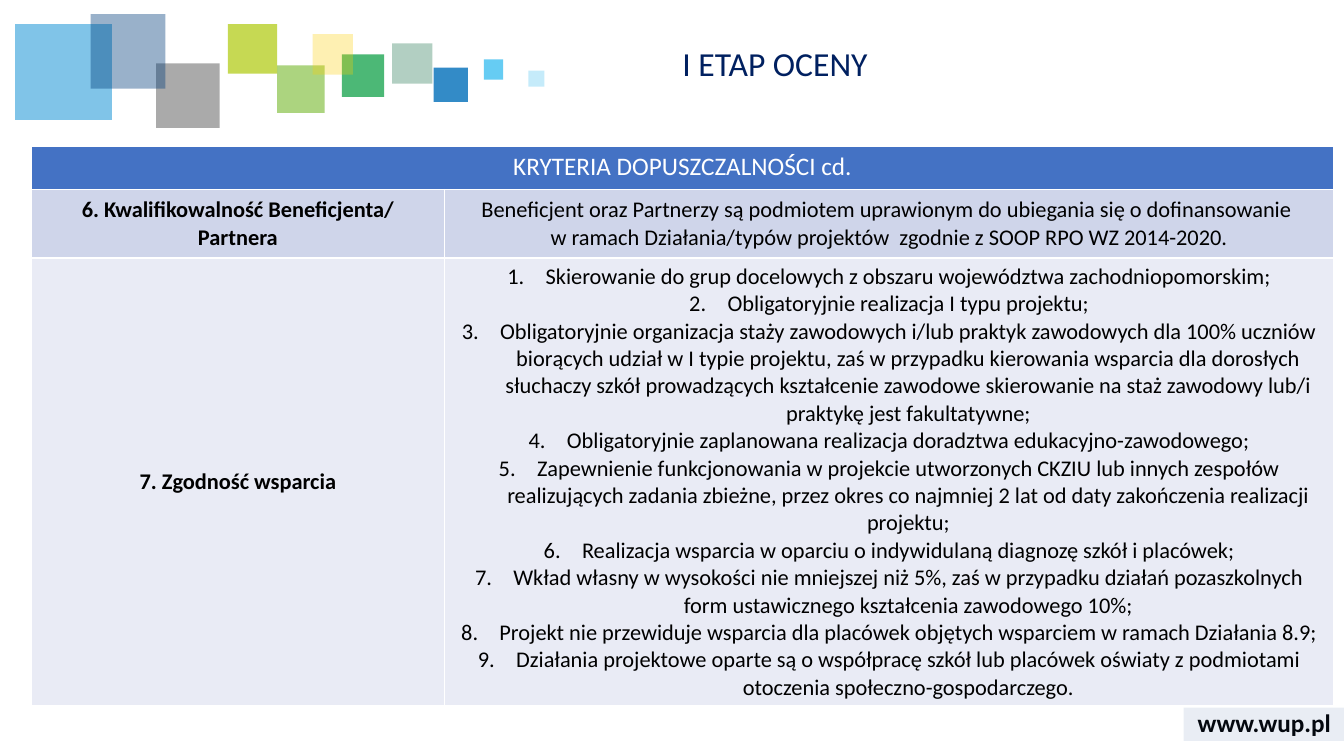
from dataclasses import dataclass
from typing import Any

from lxml.etree import SubElement
from pptx import Presentation
from pptx.dml.color import RGBColor
from pptx.enum.shapes import MSO_SHAPE as Shape
from pptx.enum.text import MSO_ANCHOR as Anchor, PP_ALIGN as Align
from pptx.oxml.ns import qn
from pptx.util import Inches, Pt


@dataclass(frozen=True)
class Theme:
    font: str = "Calibri"
    navy: str = "002060"
    black: str = "000000"
    white: str = "FFFFFF"
    header: str = "4472C4"
    band_dark: str = "CFD5EA"
    band_light: str = "E9EBF5"
    footer: str = "2F5597"
    title_size: int = 24
    heading_size: int = 18
    body_size: int = 16


@dataclass(frozen=True)
class Tile:
    left: float
    top: float
    width: float
    height: float
    color: str
    opacity: int


@dataclass(frozen=True)
class CellText:
    row: int
    column: int
    lines: tuple[str, ...]
    fill: str
    bold: bool = False
    numbered: bool = False
    size: int = 16
    color: str = "000000"
    anchor: Any = Anchor.MIDDLE


THEME = Theme()

TILES = (
    Tile(3.89, 0.43, 0.4, 0.4, "006138", 30),
    Tile(4.3, 0.67, 0.34, 0.34, "006EB9", 80),
    Tile(3.39, 0.54, 0.42, 0.42, "009A3C", 70),
    Tile(0.15, 0.24, 0.96, 0.95, "028BD3", 50),
    Tile(2.75, 0.65, 0.47, 0.47, "75B82A", 60),
    Tile(1.55, 0.63, 0.63, 0.64, "575757", 50),
    Tile(0.9, 0.14, 0.74, 0.74, "003D7C", 40),
    Tile(4.8, 0.59, 0.19, 0.2, "40C0F1", 80),
    Tile(2.26, 0.24, 0.49, 0.49, "AFCA0B", 70),
    Tile(3.1, 0.34, 0.4, 0.4, "FED000", 30),
    Tile(5.24, 0.7, 0.16, 0.16, "40C0F1", 30),
    Tile(11.74, 7.02, 1.6, 0.33, THEME.footer, 10),
)

REQUIREMENTS = (
    "Skierowanie do grup docelowych z obszaru województwa zachodniopomorskim;",
    "Obligatoryjnie realizacja I typu projektu;",
    "Obligatoryjnie organizacja staży zawodowych i/lub praktyk zawodowych dla 100% uczniów "
    "biorących udział w I typie projektu, zaś w przypadku kierowania wsparcia dla dorosłych "
    "słuchaczy szkół prowadzących kształcenie zawodowe skierowanie na staż zawodowy lub/i "
    "praktykę jest fakultatywne;",
    "Obligatoryjnie zaplanowana realizacja doradztwa edukacyjno-zawodowego;",
    "Zapewnienie funkcjonowania w projekcie utworzonych CKZIU lub innych zespołów "
    "realizujących zadania zbieżne, przez okres co najmniej 2 lat od daty zakończenia "
    "realizacji projektu;",
    "Realizacja wsparcia w oparciu o indywidulaną diagnozę szkół i placówek;",
    "Wkład własny w wysokości nie mniejszej niż 5%, zaś w przypadku działań pozaszkolnych "
    "form ustawicznego kształcenia zawodowego 10%;",
    "Projekt nie przewiduje wsparcia dla placówek objętych wsparciem w ramach Działania 8.9;",
    "Działania projektowe oparte są o współpracę szkół lub placówek oświaty z podmiotami "
    "otoczenia społeczno-gospodarczego.",
)

CELLS = (
    CellText(0, 0, ("KRYTERIA DOPUSZCZALNOŚCI cd.",), THEME.header,
             size=THEME.heading_size, color=THEME.white, anchor=Anchor.TOP),
    CellText(1, 0, ("6. Kwalifikowalność Beneficjenta/ Partnera",), THEME.band_dark, bold=True),
    CellText(1, 1, ("Beneficjent oraz Partnerzy są podmiotem uprawionym do ubiegania się "
                    "o dofinansowanie \nw ramach Działania/typów projektów  zgodnie z SOOP "
                    "RPO WZ 2014-2020.",), THEME.band_dark),
    CellText(2, 0, ("7. Zgodność wsparcia",), THEME.band_light, bold=True),
    CellText(2, 1, REQUIREMENTS, THEME.band_light, numbered=True),
)


def write_line(para: Any, text: str, size: int, color: str, bold: bool = False) -> None:
    for index, part in enumerate(text.split("\n")):
        if index:
            para.add_line_break()
        span = para.add_run()
        span.text = part
        for name, value in {"name": THEME.font, "size": Pt(size), "bold": bold}.items():
            setattr(span.font, name, value)
        span.font.color.rgb = RGBColor.from_string(color)


def number_line(para: Any) -> None:
    properties = para._p.get_or_add_pPr()
    indent = Inches(0.38)
    properties.set("marL", str(indent))
    properties.set("indent", str(-indent))
    SubElement(properties, qn("a:buFont"), typeface="+mj-lt")
    SubElement(properties, qn("a:buAutoNum"), type="arabicPeriod")


def add_text(page: Any, text: str, left: float, top: float, width: float, height: float,
             size: int, color: str, bold: bool, frame_format: dict[str, Any],
             para_format: dict[str, Any]) -> None:
    box = page.shapes.add_textbox(Inches(left), Inches(top), Inches(width), Inches(height))
    frame = box.text_frame
    para = frame.paragraphs[0]
    for target, values in ((frame, frame_format), (para, para_format)):
        for name, value in values.items():
            setattr(target, name, value)
    write_line(para, text, size, color, bold)


def add_tile(page: Any, tile: Tile) -> None:
    square = page.shapes.add_shape(Shape.RECTANGLE, Inches(tile.left), Inches(tile.top),
                                   Inches(tile.width), Inches(tile.height))
    square.shadow.inherit = False
    square.line.fill.background()
    square.fill.solid()
    square.fill.fore_color.rgb = RGBColor.from_string(tile.color)
    color = square._element.spPr.find(qn("a:solidFill"))[0]
    SubElement(color, qn("a:alpha"), val=str(tile.opacity * 1000))


def add_criteria(page: Any) -> None:
    widths, heights = (4.1, 8.82), (0.43, 0.68, 4.44)
    table = page.shapes.add_table(len(heights), len(widths), Inches(0.31), Inches(1.45),
                                  Inches(sum(widths)), Inches(sum(heights))).table
    for column, width in zip(table.columns, widths):
        column.width = Inches(width)
    for row, height in zip(table.rows, heights):
        row.height = Inches(height)
    table.cell(0, 0).merge(table.cell(0, 1))
    for entry in CELLS:
        cell = table.cell(entry.row, entry.column)
        cell.fill.solid()
        cell.fill.fore_color.rgb = RGBColor.from_string(entry.fill)
        cell.vertical_anchor = entry.anchor
        frame = cell.text_frame
        for index, line in enumerate(entry.lines):
            para = frame.add_paragraph() if index else frame.paragraphs[0]
            para.alignment = Align.CENTER
            if entry.numbered:
                number_line(para)
            write_line(para, line, entry.size, entry.color, entry.bold)


def main() -> None:
    deck = Presentation()
    deck.slide_width, deck.slide_height = Inches(13.33), Inches(7.5)
    page = deck.slides.add_slide(deck.slide_layouts[6])
    add_text(page, "www.wup.pl", 11.74, 6.97, 1.6, 0.4, THEME.heading_size, THEME.black, True,
             {"word_wrap": True, "vertical_anchor": Anchor.MIDDLE}, {"alignment": Align.CENTER})
    for tile in TILES:
        add_tile(page, tile)
    add_criteria(page)
    add_text(page, "I ETAP OCENY", 6.67, 0.42, 6.36, 0.55, THEME.title_size, THEME.navy, False,
             {"word_wrap": True}, {"line_spacing": 0.9})
    deck.save("out.pptx")


if __name__ == "__main__":
    main()
